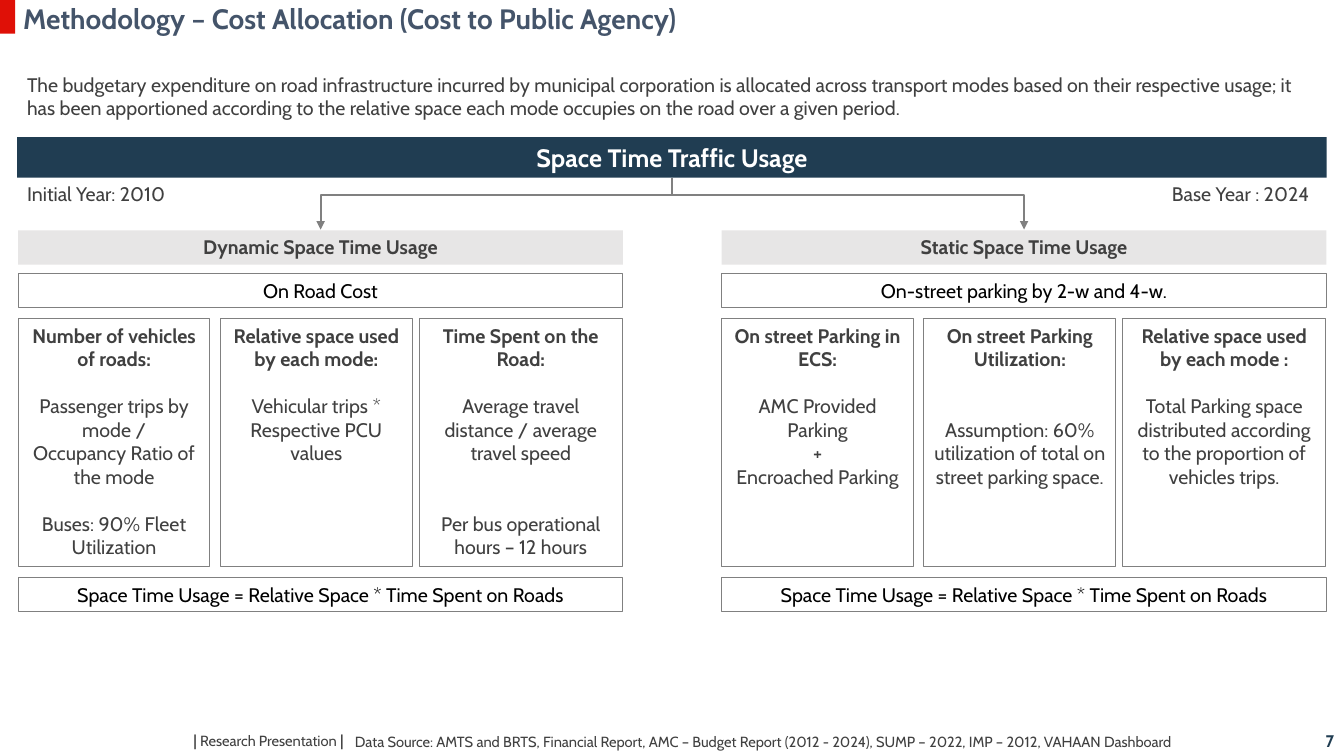
from dataclasses import dataclass

from lxml import etree
from pptx import Presentation
from pptx import util as u
from pptx.dml.color import RGBColor
from pptx.enum import shapes, text
from pptx.oxml import ns

Pt = u.Pt
LEFT, CENTER, RIGHT = text.PP_ALIGN.LEFT, text.PP_ALIGN.CENTER, text.PP_ALIGN.RIGHT
TOP, MIDDLE = text.MSO_ANCHOR.TOP, text.MSO_ANCHOR.MIDDLE


@dataclass(frozen=True)
class Theme:
    """Colours, font and type sizes of the slide."""
    font: str = "Cabin"
    navy: str = "203D52"
    red: str = "DF1007"
    slate: str = "44546A"
    ink: str = "404040"
    black: str = "000000"
    white: str = "FFFFFF"
    pale: str = "E7E6E6"
    rule: str = "808080"
    title: float = 20
    banner: float = 18
    body: float = 14
    number: float = 12
    bar: float = 11
    note: float = 10.5
    blank_line: float = 16.8


class Deck:
    """Draws styled elements on the current slide."""

    def __init__(self, prs, theme):
        """Keep the theme and add a blank slide."""
        self.t = theme
        self.s = prs.slides.add_slide(prs.slide_layouts[6])

    def set_text(self, sp, paras, align=LEFT, anchor=TOP, color=None, size=None, bold=False, frame=None):
        """Fill a shape with (runs, space before) paragraphs; a run is (text, overrides)."""
        tf = sp.text_frame
        settings = {"word_wrap": True, "vertical_anchor": anchor, **(frame or {})}
        for name, value in settings.items():
            setattr(tf, name, value)
        for i, (runs, before) in enumerate(paras):
            p = tf.paragraphs[0] if i == 0 else tf.add_paragraph()
            p.alignment = align
            if before:
                p.space_before = Pt(before)
            for words, extra in runs:
                r = p.add_run()
                r.text = words
                fmt = {"name": self.t.font, "size": size or self.t.body, "bold": bold, **extra}
                fmt["size"] = Pt(fmt["size"])
                for name, value in fmt.items():
                    setattr(r.font, name, value)
                r.font.color.rgb = RGBColor.from_string(color or self.t.ink)

    def label(self, at, words, **style):
        """Add a text box holding one paragraph."""
        sp = self.s.shapes.add_textbox(*map(Pt, at))
        runs = [(words, {})] if isinstance(words, str) else words
        self.set_text(sp, [(runs, 0)], **style)
        return sp

    def box(self, at, paras=(), fill=None, line=None, **style):
        """Add a rectangle with optional fill, outline and centred text."""
        sp = self.s.shapes.add_shape(shapes.MSO_SHAPE.RECTANGLE, *map(Pt, at))
        sp.shadow.inherit = False
        if fill:
            sp.fill.solid()
            sp.fill.fore_color.rgb = RGBColor.from_string(fill)
        else:
            sp.fill.background()
        if line:
            self.stroke(sp, line, 0.75)
        else:
            sp.line.fill.background()
        self.set_text(sp, paras, align=CENTER, **style)
        return sp

    def stroke(self, sp, color, width):
        """Set the line colour and width of a shape."""
        sp.line.color.rgb = RGBColor.from_string(color)
        sp.line.width = Pt(width)

    def stem(self, sp, x, top, bottom):
        """Drop a vertical connector from the bottom of a rectangle."""
        cx = self.s.shapes.add_connector(shapes.MSO_CONNECTOR.STRAIGHT, Pt(x), Pt(top), Pt(x), Pt(bottom))
        cx.begin_connect(sp, 2)
        self.stroke(cx, self.t.rule, 1.5)
        etree.SubElement(cx.element.spPr, ns.qn("a:effectLst"))

    def bracket(self, points):
        """Draw an open polyline with an arrowhead at both ends."""
        start, *rest = [(Pt(x), Pt(y)) for x, y in points]
        fb = self.s.shapes.build_freeform(*start, scale=1.0)
        fb.add_line_segments(rest, close=False)
        sp = fb.convert_to_shape()
        sp.shadow.inherit = False
        sp.fill.background()
        self.stroke(sp, self.t.rule, 1.5)
        ln = sp.element.spPr.find(ns.qn("a:ln"))
        for end in ("a:headEnd", "a:tailEnd"):
            etree.SubElement(ln, ns.qn(end), type="triangle")

    def panel(self, x, header, subject, cards):
        """Draw one usage column: header, subject, three cards and formula."""
        formula = "Space Time Usage = Relative Space * Time Spent on Roads"
        self.box((x, 164.5, PANEL_W, ROW_H), [([(header, {})], 0)], fill=self.t.pale, bold=True)
        for y, words in ((195.5, subject), (412.25, formula)):
            self.box((x, y, PANEL_W, ROW_H), [([(words, {})], 0)], line=self.t.rule,
                     anchor=MIDDLE, color=self.t.black)
        for (dx, w), (heading, *lines) in zip(CARD_SLOTS, cards):
            paras = [([(heading, {"bold": True})], 0)]
            paras += [([(words, {})], gap * self.t.blank_line) for words, gap in lines]
            self.box((x + dx, 227.5, w, 177), paras, line=self.t.rule)


PANEL_W, ROW_H = 432, 24.5
CARD_SLOTS = ((0, 137), (144.5, 137), (286.5, 145))
PANELS = (
    (13, "Dynamic Space Time Usage", "On Road Cost", (
        ("Number of vehicles of roads:", ("Passenger trips by mode /", 1),
         ("Occupancy Ratio of the mode", 0), ("Buses: 90% Fleet Utilization", 1)),
        ("Relative space used by each mode:", ("Vehicular trips * Respective PCU values", 1)),
        ("Time Spent on the Road:", ("Average travel distance / average travel speed", 1),
         ("Per bus operational hours – 12 hours", 2)))),
    (515.5, "Static Space Time Usage", "On-street parking by 2-w and 4-w.", (
        ("On street Parking in ECS:", ("AMC Provided Parking", 1), ("+", 0), ("Encroached Parking", 0)),
        ("On street Parking Utilization:",
         ("Assumption: 60% utilization of total on street parking space.", 2)),
        ("Relative space used by each mode :",
         ("Total Parking space distributed according to the proportion of vehicles trips.", 1)))),
)
INTRO = ("The budgetary expenditure on road infrastructure incurred by municipal corporation is allocated "
         "across transport modes based on their respective usage; it has been apportioned according to "
         "the relative space each mode occupies on the road over a given period.")
SOURCES = ("Data Source: AMTS and BRTS, Financial Report, AMC – Budget Report (2012 - 2024), "
           "SUMP – 2022, IMP – 2012, VAHAAN Dashboard")


def main():
    """Build the slide and save it."""
    prs = Presentation()
    prs.slide_width, prs.slide_height = Pt(960), Pt(540)
    t = Theme()
    d = Deck(prs, t)

    d.box((0, 0, 10.8, 24), fill=t.red)
    title = d.label((0, 0, 893.5, 27.5), "Methodology – Cost Allocation (Cost to Public Agency)",
                    size=t.title, color=t.slate, bold=True, frame={"margin_left": Pt(16.5)})
    title.text_frame.paragraphs[0].line_spacing = 0.9
    d.label((12.25, 48.25, 934.5, 41), INTRO)

    banner = d.box((12.25, 98, 935.5, 29), [([("Space Time Traffic Usage", {})], 0)],
                   fill=t.navy, color=t.white, size=t.banner, bold=True)
    d.label((12.25, 126.5, 118, ROW_H), "Initial Year: 2010")
    d.label((830, 126.5, 118, ROW_H), "Base Year : 2024")

    for panel in PANELS:
        d.panel(*panel)
    left, right = (x + PANEL_W / 2 for x, *_ in PANELS)
    d.bracket([(left, 164), (left, 139.5), (right, 139.5), (right, 164)])
    d.stem(banner, 480, 127, 139.5)

    bar = ("|", {"bold": True, "size": t.bar})
    d.label((131, 518.5, 384.5, 21), [bar, (" Research Presentation ", {}), bar], size=t.note, anchor=MIDDLE)
    d.label((246.5, 520, 676, 20), SOURCES, size=t.note)
    d.label((744, 518.5, 216, 21), "7", align=RIGHT, size=t.number, color=t.navy, bold=True)

    prs.save("out.pptx")


if __name__ == "__main__":
    main()
